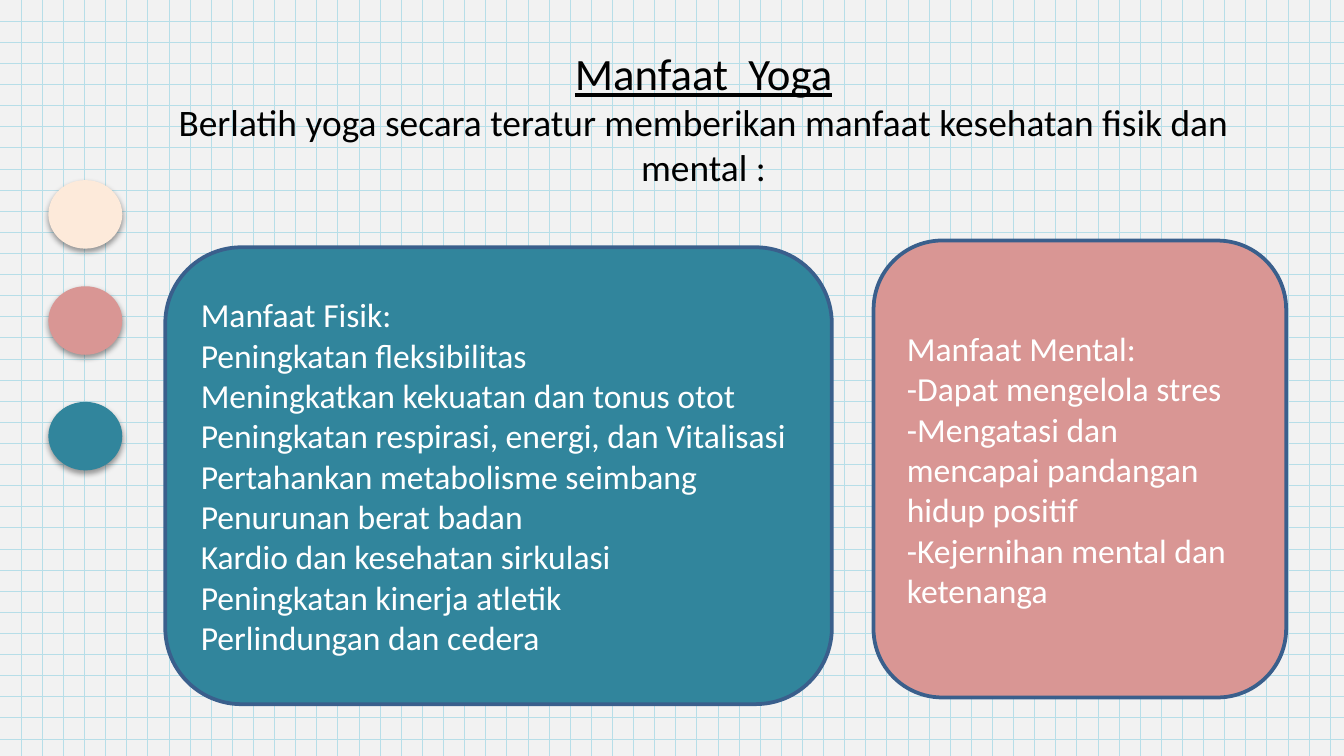
from dataclasses import dataclass

from lxml.etree import SubElement
from pptx import Presentation
from pptx.dml.color import RGBColor
from pptx.enum.dml import MSO_PATTERN
from pptx.enum.shapes import MSO_SHAPE
from pptx.enum.text import MSO_ANCHOR, MSO_AUTO_SIZE, PP_ALIGN
from pptx.oxml.ns import qn
from pptx.util import Inches, Pt

FONT = "Calibri"
BLACK = RGBColor(0x00, 0x00, 0x00)
WHITE = RGBColor(0xFF, 0xFF, 0xFF)
PAPER = RGBColor(0xF2, 0xF2, 0xF2)
GRID = RGBColor(0xB7, 0xDE, 0xE8)
CREAM = RGBColor(0xFD, 0xEA, 0xDA)
PINK = RGBColor(0xD9, 0x96, 0x94)
TEAL = RGBColor(0x31, 0x85, 0x9C)
OUTLINE = RGBColor(0x3A, 0x5F, 0x8C)


@dataclass
class Dot:
    top: float
    color: RGBColor


@dataclass
class Card:
    left: float
    top: float
    width: float
    color: RGBColor
    lines: list[str]


DOT_LEFT, DOT_WIDTH, DOT_HEIGHT = 0.36, 0.55, 0.51
CARD_HEIGHT = 3.4
DOTS = [Dot(1.34, CREAM), Dot(2.13, PINK), Dot(2.99, TEAL)]
CARDS = [
    Card(6.5, 1.79, 3.07, PINK, [
        "Manfaat Mental:",
        "-Dapat mengelola stres",
        "-Mengatasi dan mencapai pandangan hidup positif",
        "-Kejernihan mental dan ketenanga",
    ]),
    Card(1.23, 1.84, 4.96, TEAL, [
        "Manfaat Fisik:",
        "Peningkatan fleksibilitas",
        "Meningkatkan kekuatan dan tonus otot",
        "Peningkatan respirasi, energi, dan Vitalisasi",
        "Pertahankan metabolisme seimbang",
        "Penurunan berat badan",
        "Kardio dan kesehatan sirkulasi",
        "Peningkatan kinerja atletik",
        "Perlindungan dan cedera",
    ]),
]


def add_line(tf, index: int, text: str, align: PP_ALIGN, color: RGBColor, **formats) -> None:
    """Write one paragraph, reusing the empty first one of the frame."""
    p = tf.add_paragraph() if index else tf.paragraphs[0]
    p.alignment = align
    r = p.add_run()
    r.text = text
    r.font.color.rgb = color
    for name, value in {"name": FONT, **formats}.items():
        setattr(r.font, name, value)


def add_shadow(sp) -> None:
    sp.shadow.inherit = False
    effects = sp._element.spPr.find(qn("a:effectLst"))
    shadow = SubElement(effects, qn("a:outerShdw"), blurRad=str(Pt(3.1)),
                        dist=str(Pt(1.6)), dir="5400000", rotWithShape="0")
    color = SubElement(shadow, qn("a:srgbClr"), val=str(BLACK))
    SubElement(color, qn("a:alpha"), val="38000")


def draw_dot(shapes, dot: Dot) -> None:
    sp = shapes.add_shape(MSO_SHAPE.FLOWCHART_CONNECTOR, Inches(DOT_LEFT), Inches(dot.top),
                          Inches(DOT_WIDTH), Inches(DOT_HEIGHT))
    sp.fill.solid()
    sp.fill.fore_color.rgb = dot.color
    sp.line.fill.background()
    add_shadow(sp)


def draw_card(shapes, card: Card) -> None:
    sp = shapes.add_shape(MSO_SHAPE.ROUNDED_RECTANGLE, Inches(card.left), Inches(card.top),
                          Inches(card.width), Inches(CARD_HEIGHT))
    sp.shadow.inherit = False
    sp.fill.solid()
    sp.fill.fore_color.rgb = card.color
    sp.line.color.rgb = OUTLINE
    sp.line.width = Pt(2)
    tf = sp.text_frame
    tf.word_wrap = True
    tf.vertical_anchor = MSO_ANCHOR.MIDDLE
    for i, text in enumerate(card.lines):
        add_line(tf, i, text, PP_ALIGN.LEFT, WHITE, size=Pt(18))


def fill_title(title) -> None:
    box = {"left": 1.06, "top": 0.29, "width": 8.35, "height": 1.51}
    for name, value in box.items():
        setattr(title, name, Inches(value))
    tf = title.text_frame
    tf.word_wrap = True
    tf.auto_size = MSO_AUTO_SIZE.NONE
    tf.vertical_anchor = MSO_ANCHOR.TOP
    add_line(tf, 0, "Manfaat  Yoga", PP_ALIGN.CENTER, BLACK, size=Pt(24), underline=True)
    add_line(tf, 1, "Berlatih yoga secara teratur memberikan manfaat kesehatan fisik dan mental :",
             PP_ALIGN.CENTER, BLACK, size=Pt(20))


def main() -> None:
    prs = Presentation()
    prs.slide_width = Inches(10)
    prs.slide_height = Inches(10 * 9 / 16)
    slide = prs.slides.add_slide(prs.slide_layouts.get_by_name("Title Only"))

    fill = slide.background.fill
    fill.patterned()
    fill.pattern = MSO_PATTERN.DOTTED_GRID
    fill.fore_color.rgb = GRID
    fill.back_color.rgb = PAPER

    fill_title(slide.shapes.title)
    dots = slide.shapes.add_group_shape()
    for dot in DOTS:
        draw_dot(dots.shapes, dot)
    for card in CARDS:
        draw_card(slide.shapes, card)
    prs.save("out.pptx")


if __name__ == "__main__":
    main()
